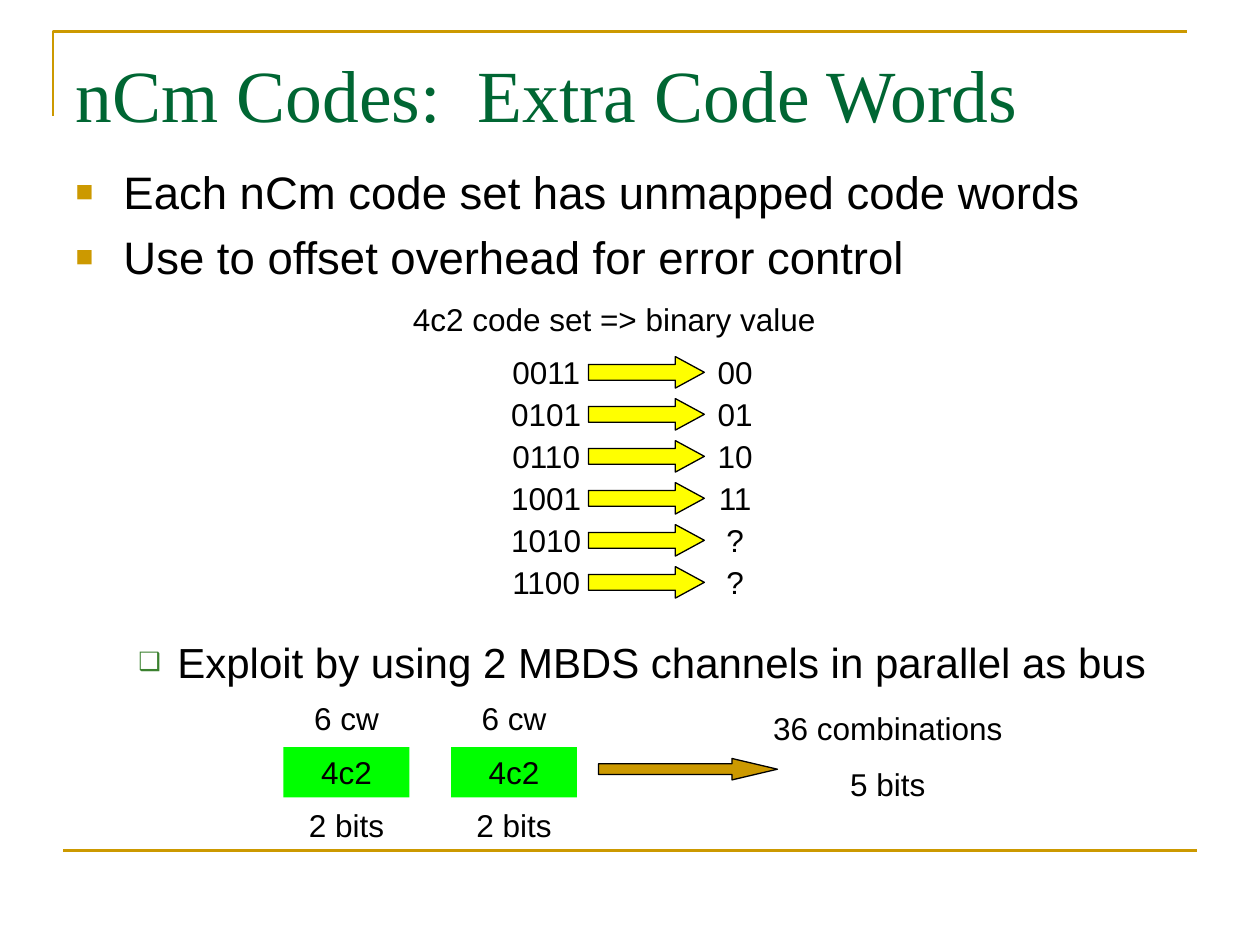
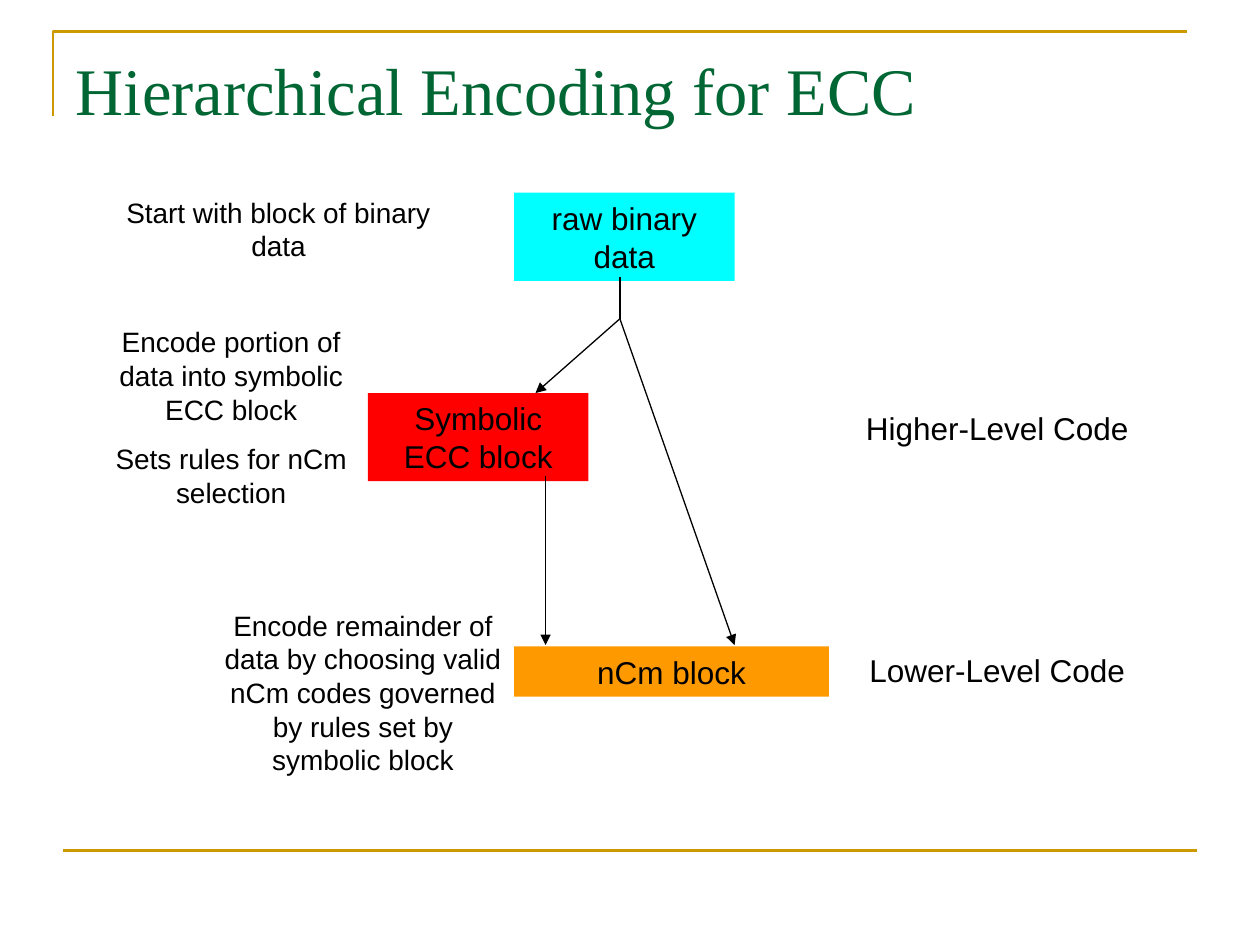
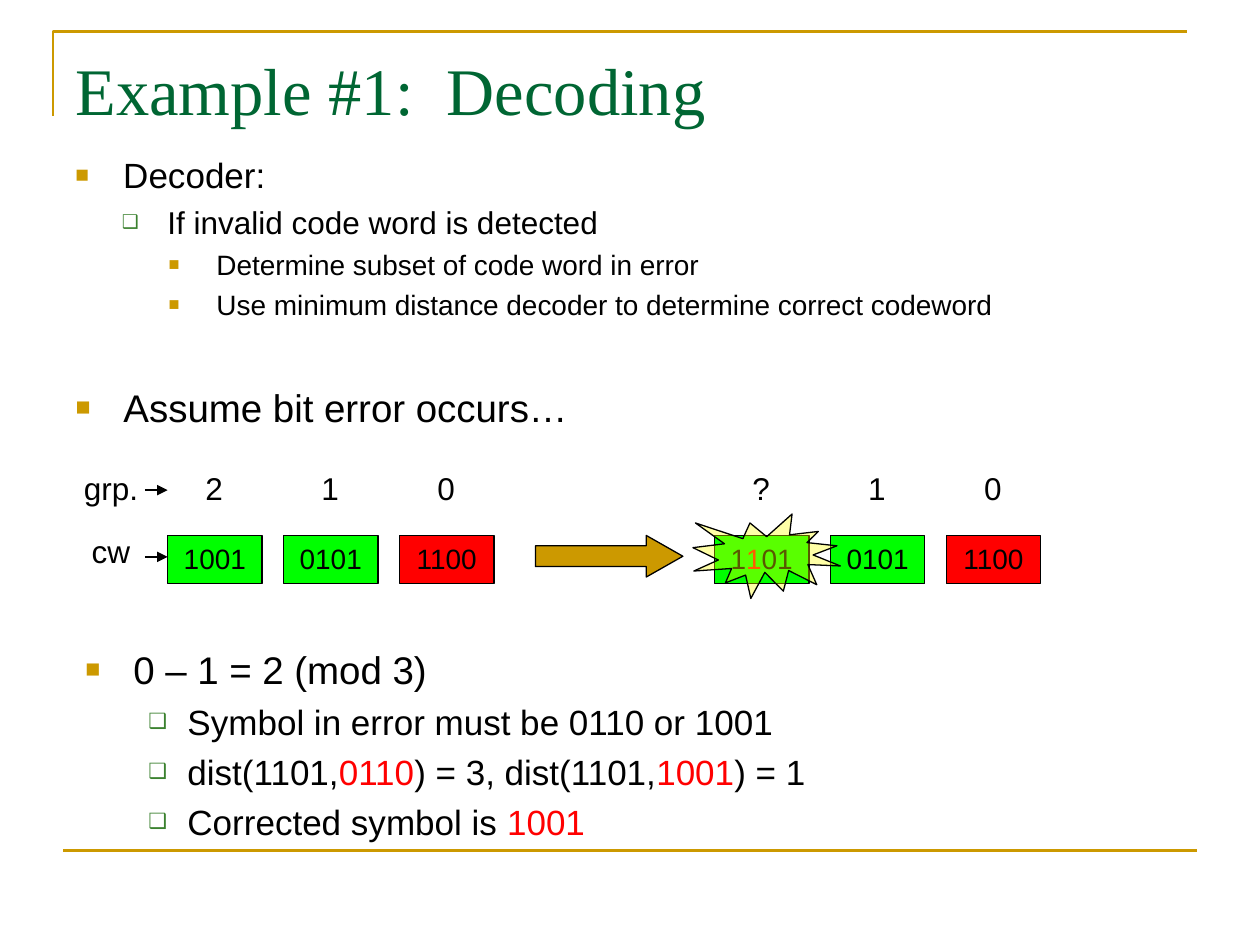
from dataclasses import dataclass
from lxml.etree import SubElement
from pptx import Presentation
from pptx.dml.color import RGBColor
from pptx.enum.shapes import MSO_CONNECTOR, MSO_SHAPE
from pptx.enum.text import MSO_ANCHOR, MSO_AUTO_SIZE, PP_ALIGN
from pptx.oxml.ns import qn
from pptx.util import Inches, Pt


@dataclass(frozen=True)
class Theme:
    heading_font: str = "Times New Roman"
    body_font: str = "Arial"
    title: str = "006633"
    gold: str = "CC9900"
    leaf: str = "3B812F"
    ink: str = "000000"
    red: str = "FF0000"
    green: str = "00FF00"
    yellow: str = "FFFF00"
    cyan: str = "00FFFF"
    orange: str = "FF9900"
    title_large: int = 42
    title_size: int = 38
    label: int = 18
    note: int = 16
    hairline: float = 0.75
    rule: float = 1.5
    line_height: float = 1.15


THEME = Theme()
BULLETS = [("■", THEME.gold, 65), ("❑", THEME.leaf, 60), ("■", THEME.gold, 65)]
WIDE_INDENTS = [(0.38, 0.38), (0.81, 0.31)]
TIGHT_INDENTS = [(0.38, 0.38), (0.73, 0.36), (1.12, 0.38)]

EXTRA_WORDS = {
    "title": "nCm Codes:  Extra Code Words",
    "points": [
        (0, 26, "Each nCm code set has unmapped code words"),
        (0, 26, "Use to offset overhead for error control"),
    ],
    "mapping_heading": "4c2 code set => binary value",
    "mapping": [("0011", "00"), ("0101", "01"), ("0110", "10"),
                ("1001", "11"), ("1010", "?"), ("1100", "?")],
    "exploit": [(1, 24, "Exploit by using 2 MBDS channels in parallel as bus")],
    "channels": [("6 cw", "4c2", "2 bits")] * 2,
    "bus_result": ["36 combinations", "5 bits"],
}

HIERARCHY = {
    "title": "Hierarchical Encoding for ECC",
    "blocks": [
        ("raw binary data", (4.08, 1.53, 1.75, 0.7), THEME.cyan),
        ("Symbolic ECC block", (2.92, 3.12, 1.75, 0.7), THEME.red),
        ("nCm block", (4.08, 5.13, 2.5, 0.4), THEME.orange),
    ],
    "steps": [
        (["Start with block of binary data"], (0.67, 1.5, 3.08, 0.64)),
        (["Encode portion of data into symbolic ECC block",
          "Sets rules for nCm selection"], (0.75, 2.53, 2.17, 1.57)),
        (["Encode remainder of data by choosing valid nCm codes "
          "governed by rules set by symbolic block"], (1.67, 4.78, 2.42, 1.44)),
    ],
    "code_levels": [("Higher-Level Code", 3.2), ("Lower-Level Code", 5.12)],
    "flows": [
        ((4.92, 2.2), (4.92, 2.53), False),
        ((4.92, 2.53), (4.25, 3.12), True),
        ((4.92, 2.53), (5.83, 5.12), True),
        ((4.33, 3.78), (4.33, 5.12), True),
    ],
}

DECODING = {
    "title": "Example #1:  Decoding",
    "decoder": [
        (0, 20, "Decoder:"),
        (1, 18, "If invalid code word is detected"),
        (2, 16, "Determine subset of code word in error"),
        (2, 16, "Use minimum distance decoder to determine correct codeword"),
    ],
    "assumption": [(0, 22, "Assume bit error occurs…")],
    "row_names": [("grp.", 3.67, 3.89), ("cw", 4.17, 4.42)],
    "words": [
        (1.33, [("2", "1001", THEME.green), ("1", "0101", THEME.green),
                ("0", "1100", THEME.red)]),
        (5.67, [("?", "1*1*01", THEME.green), ("1", "0101", THEME.green),
                ("0", "1100", THEME.red)]),
    ],
    "correction": [
        (0, 22, "0 – 1 = 2 (mod 3)"),
        (1, 20, "Symbol in error must be 0110 or 1001"),
        (1, 20, "dist(1101,*0110*) = 3, dist(1101,*1001*) = 1"),
        (1, 20, "Corrected symbol is *1001*"),
    ],
}


def inches(box):
    return [Inches(length) for length in box]


def rgb(color):
    return RGBColor.from_string(color)


def write(paragraph, text, size=THEME.label, font=THEME.body_font,
          color=THEME.ink, align=PP_ALIGN.CENTER, before=0.5):
    paragraph.alignment = align
    paragraph.space_before = Pt(round(size * before * THEME.line_height, 1))
    for index, piece in enumerate(text.split("*")):
        if piece:
            run = paragraph.add_run()
            run.text = piece
            run.font.name = font
            run.font.size = Pt(size)
            run.font.color.rgb = rgb(THEME.red if index % 2 else color)


def paragraphs_for(frame, count):
    frame.word_wrap = True
    frame.auto_size = MSO_AUTO_SIZE.NONE
    frame.vertical_anchor = MSO_ANCHOR.TOP
    return [frame.paragraphs[0]] + [frame.add_paragraph() for _ in range(count - 1)]


def add_label(slide, lines, box, **style):
    frame = slide.shapes.add_textbox(*inches(box)).text_frame
    for paragraph, line in zip(paragraphs_for(frame, len(lines)), lines):
        write(paragraph, line, **style)


def add_block(slide, kind, box, fill, text="", outlined=True, head=None, **style):
    block = slide.shapes.add_shape(kind, *inches(box))
    block.shadow.inherit = False
    block.fill.solid()
    block.fill.fore_color.rgb = rgb(fill)
    if outlined:
        block.line.color.rgb = rgb(THEME.ink)
        block.line.width = Pt(THEME.hairline)
    else:
        block.line.fill.background()
    if head:
        block.adjustments[1] = head
    if text:
        write(paragraphs_for(block.text_frame, 1)[0], text, **style)
    return block


def add_line(slide, start, end, color=THEME.ink, width=THEME.hairline, arrow=True):
    line = slide.shapes.add_connector(MSO_CONNECTOR.STRAIGHT, *inches(start + end))
    line.line.color.rgb = rgb(color)
    line.line.width = Pt(width)
    properties = line.element.spPr
    if arrow:
        SubElement(properties.find(qn("a:ln")), qn("a:tailEnd"), type="triangle")
    SubElement(properties, qn("a:effectLst"))
    return line


def fill_outline(frame, items, indents=WIDE_INDENTS):
    for paragraph, (level, size, text) in zip(paragraphs_for(frame, len(items)), items):
        symbol, color, percent = BULLETS[level]
        left, hanging = indents[level]
        paragraph.level = level
        write(paragraph, text, size=size, align=PP_ALIGN.LEFT, before=0.2)
        properties = paragraph._p.get_or_add_pPr()
        properties.set("marL", str(Inches(left)))
        properties.set("indent", str(-Inches(hanging)))
        SubElement(SubElement(properties, qn("a:buClr")), qn("a:srgbClr"), val=color)
        SubElement(properties, qn("a:buSzPct"), val=str(percent * 1000))
        SubElement(properties, qn("a:buFont"), typeface=THEME.body_font)
        SubElement(properties, qn("a:buChar"), char=symbol)


def add_outline(slide, items, box, indents=WIDE_INDENTS):
    fill_outline(slide.shapes.add_textbox(*inches(box)).text_frame, items, indents)


def place(placeholder, box):
    placeholder.left, placeholder.top, placeholder.width, placeholder.height = inches(box)
    return placeholder.text_frame


def start_slide(deck, title, size=THEME.title_size, body=None, body_box=None):
    slide = deck.slides.add_slide(deck.slide_layouts[1 if body else 5])
    frame = place(slide.shapes.title, (0.5, 0.3, 9, 0.7))
    frame.margin_top = Inches(0.09)
    write(paragraphs_for(frame, 1)[0], title, size=size, font=THEME.heading_font,
          color=THEME.title, align=PP_ALIGN.LEFT, before=0)
    if body:
        fill_outline(place(slide.placeholders[1], body_box), body)
    return slide


def move_frame_to_master(deck, slide):
    builder = slide.shapes.build_freeform(Inches(0.42), Inches(0.92))
    builder.add_line_segments([inches((0.42, 0.25)), inches((9.42, 0.25))], close=False)
    corner = builder.convert_to_shape()
    corner.shadow.inherit = False
    corner.fill.background()
    corner.line.color.rgb = rgb(THEME.gold)
    corner.line.width = Pt(THEME.rule)
    base = add_line(slide, (0.5, 6.75), (9.5, 6.75), THEME.gold, THEME.rule, arrow=False)
    for number, part in enumerate((corner, base), start=101):
        part.element.xpath(".//p:cNvPr")[0].set("id", str(number))
        deck.slide_master.shapes.element.append(part.element)


def build_extra_words(deck):
    content = EXTRA_WORDS
    slide = start_slide(deck, content["title"], THEME.title_large,
                        content["points"], (0.5, 1.25, 9, 1.08))
    move_frame_to_master(deck, slide)
    add_label(slide, [content["mapping_heading"]], (2.75, 2.33, 4.25, 0.4))
    for row, (code, value) in enumerate(content["mapping"]):
        top = 2.75 + row / 3
        add_label(slide, [code], (3.92, top, 0.83, 0.4))
        add_label(slide, [value], (5.42, top, 0.83, 0.4))
        add_block(slide, MSO_SHAPE.RIGHT_ARROW, (4.67, top + 0.08, 0.92, 0.25),
                  THEME.yellow, head=0.92)
    add_outline(slide, content["exploit"], (0.5, 5, 9, 0.58))
    for column, (words, code, bits) in enumerate(content["channels"]):
        left = 2.25 + column * 1.33
        add_label(slide, [words], (left, 5.5, 1, 0.4))
        add_block(slide, MSO_SHAPE.RECTANGLE, (left, 5.93, 1, 0.4), THEME.green,
                  code, outlined=False)
        add_label(slide, [bits], (left, 6.35, 1, 0.4))
    add_block(slide, MSO_SHAPE.RIGHT_ARROW, (4.75, 6.02, 1.42, 0.17), THEME.gold, head=2.12)
    add_label(slide, content["bus_result"], (5.92, 5.58, 2.25, 0.85))


def build_hierarchy(deck):
    content = HIERARCHY
    slide = start_slide(deck, content["title"])
    for name, box, fill in content["blocks"]:
        add_block(slide, MSO_SHAPE.RECTANGLE, box, fill, name, outlined=False)
    for lines, box in content["steps"]:
        add_label(slide, lines, box, size=THEME.note)
    for name, top in content["code_levels"]:
        add_label(slide, [name], (6.5, top, 2.83, 0.4))
    for start, end, arrow in content["flows"]:
        add_line(slide, start, end, arrow=arrow)


def build_decoding(deck):
    content = DECODING
    slide = start_slide(deck, content["title"], body=content["assumption"],
                        body_box=(0.5, 3, 9, 0.58))
    add_outline(slide, content["correction"], (0.58, 5.08, 9, 1.75))
    add_outline(slide, content["decoder"], (0.5, 1.17, 9, 1.58), TIGHT_INDENTS)
    for first_left, words in content["words"]:
        for column, (group, word, fill) in enumerate(words):
            left = first_left + column * 0.92
            add_label(slide, [group], (left + 0.08, 3.67, 0.58, 0.4))
            add_block(slide, MSO_SHAPE.RECTANGLE, (left, 4.25, 0.75, 0.38), fill,
                      word, size=THEME.note)
    add_block(slide, MSO_SHAPE.RIGHT_ARROW, (4.25, 4.25, 1.17, 0.33), THEME.gold, head=0.88)
    burst = add_block(slide, MSO_SHAPE.EXPLOSION1, (5.5, 4.08, 1.17, 0.67), THEME.yellow)
    burst_color = burst.element.spPr.find(qn("a:solidFill")).find(qn("a:srgbClr"))
    SubElement(burst_color, qn("a:alpha"), val="35000")
    for name, top, arrow_top in content["row_names"]:
        add_label(slide, [name], (0.42, top, 0.92, 0.4))
        add_line(slide, (1.15, arrow_top), (1.33, arrow_top))


def main():
    deck = Presentation()
    deck.slide_width, deck.slide_height = Inches(10), Inches(7.5)
    build_extra_words(deck)
    build_hierarchy(deck)
    build_decoding(deck)
    deck.save("out.pptx")


if __name__ == "__main__":
    main()
